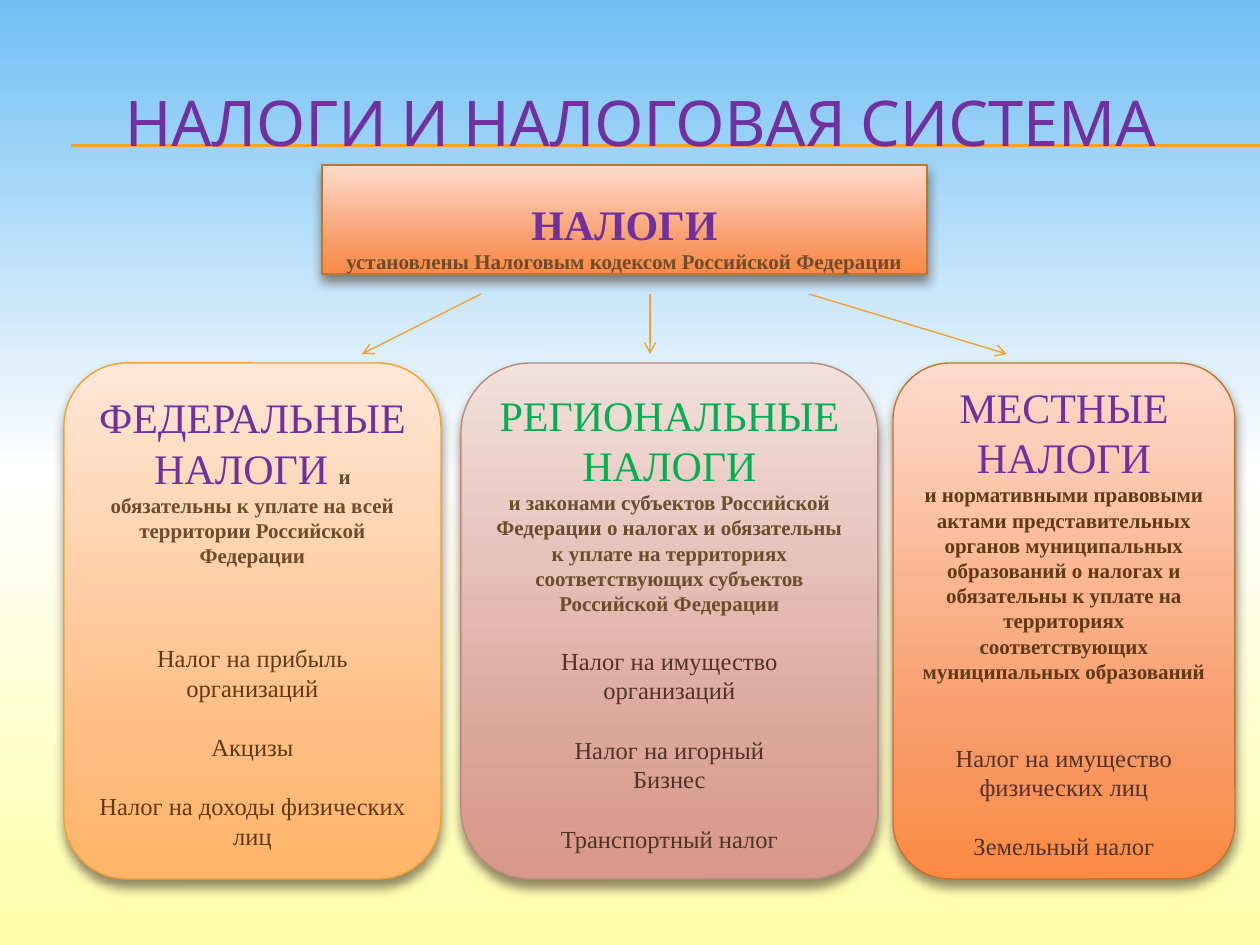
import lxml.etree
import pptx
import pptx.dml.color
import pptx.enum.shapes
import pptx.enum.text
import pptx.oxml.ns
import pptx.util

SCALE = 914400 / 126
SERIF = "Times New Roman"
PURPLE, GREEN, AMBER = "7030A0", "00B050", "F0A22E"
BROWN, DARK, UMBER = "6C4C2C", "603A14", "523227"
SKY = [(0, "70BFF4"), (50, "FFFFFF"), (100, "FFFFA7")]
ORANGE = [(0, "FDDBCC"), (72, "F89B69"), (100, "FC8A43")]
PEACH = [(0, "FFE7D7"), (72, "FFBE84"), (100, "FFB468")]
ROSE = [(0, "F3E0DB"), (72, "DCA79B"), (100, "D89787")]


def px(length):
    """Turn pixels into EMU."""
    return pptx.util.Emu(round(length * SCALE))


def colour(code):
    """Turn a hex string into a colour."""
    return pptx.dml.color.RGBColor.from_string(code)


def add_node(parent, tag, **attributes):
    """Append a drawing element with its attributes."""
    node = lxml.etree.SubElement(parent, pptx.oxml.ns.qn(tag))
    for name, value in attributes.items():
        node.set(name, str(value))
    return node


def paint_gradient(fill, element, stops):
    """Fill from top to bottom through the given stops."""
    fill.gradient()
    fill.gradient_angle = 270
    stop_list = next(element.iter(pptx.oxml.ns.qn("a:gsLst")))
    for old_stop in list(stop_list):
        stop_list.remove(old_stop)
    for percent, code in stops:
        stop = add_node(stop_list, "a:gs", pos=percent * 1000)
        add_node(stop, "a:srgbClr", val=code)


def add_shadow(shape):
    """Give a shape a soft shadow below it."""
    shape.shadow.inherit = False
    effects = next(shape._element.iter(pptx.oxml.ns.qn("a:effectLst")))
    shadow = add_node(effects, "a:outerShdw", blurRad=pptx.util.Pt(6),
                      dist=pptx.util.Pt(4), dir=5400000, rotWithShape=0)
    tone = add_node(shadow, "a:srgbClr", val="4E3B30")
    add_node(tone, "a:alpha", val=60000)


def add_panel(page, kind, box, stops, outline):
    """Draw a shaded panel with an outline and a shadow."""
    panel = page.shapes.add_shape(kind, *map(px, box))
    paint_gradient(panel.fill, panel._element, stops)
    panel.line.color.rgb = colour(outline)
    panel.line.width = pptx.util.Pt(0.79)
    add_shadow(panel)
    panel.text_frame.word_wrap = True
    return panel


def add_line(page, start, end, width, arrow=False):
    """Draw an amber line, with an arrowhead if asked."""
    line = page.shapes.add_connector(
        pptx.enum.shapes.MSO_CONNECTOR.STRAIGHT, *map(px, start + end))
    line.line.color.rgb = colour(AMBER)
    line.line.width = pptx.util.Pt(width)
    if arrow:
        add_node(line.line._get_or_add_ln(), "a:tailEnd", type="arrow")
    add_node(line._element.spPr, "a:effectLst")


def add_span(para, text, size, code, bold=False, font=SERIF):
    """Add one formatted run."""
    span = para.add_run()
    span.text = text
    span.font.name = font
    span.font.size = pptx.util.Pt(size)
    span.font.bold = bold
    span.font.color.rgb = colour(code)


def write_paras(frame, paras):
    """Write centred paragraphs, each a gap above in px and its runs."""
    for index, (gap, spans) in enumerate(paras):
        para = frame.add_paragraph() if index else frame.paragraphs[0]
        para.alignment = pptx.enum.text.PP_ALIGN.CENTER
        if index:
            para.space_before = px(gap)
        for span in spans:
            add_span(para, *span)


def add_title(page, box, text):
    """Place the title over its double rule."""
    left, top, width, height = box
    for offset in (82, 83):
        add_line(page, (left + 29, top + offset), (1260, top + offset), 0.75)
    title = page.shapes.title
    title.left, title.top, title.width, title.height = map(px, box)
    title.text_frame.vertical_anchor = pptx.enum.text.MSO_ANCHOR.MIDDLE
    write_paras(title.text_frame, [(0, [(text, 36, PURPLE, False, "Cabin")])])
    page.shapes.element.append(title._element)


def add_root(page, box):
    """Draw the top box that names the taxes."""
    root = add_panel(page, pptx.enum.shapes.MSO_SHAPE.RECTANGLE, box, ORANGE, "C17529")
    frame = root.text_frame
    frame.margin_bottom = 0
    frame.vertical_anchor = pptx.enum.text.MSO_ANCHOR.BOTTOM
    note = "установлены Налоговым кодексом Российской Федерации"
    write_paras(frame, [(0, [("НАЛОГИ", 24, PURPLE, True)]),
                        (0, [(note, 12, BROWN, True)])])


def add_level(page, box, stops, outline, lead, items, item_colour):
    """Draw one tax level with its heading and its list of taxes."""
    level = add_panel(page, pptx.enum.shapes.MSO_SHAPE.ROUNDED_RECTANGLE,
                      box, stops, outline)
    level.text_frame.vertical_anchor = pptx.enum.text.MSO_ANCHOR.MIDDLE
    taxes = [(gap, [(text, 14, item_colour)]) for gap, text in items]
    write_paras(level.text_frame, lead + taxes)


def main():
    """Build the slide and save it."""
    deck = pptx.Presentation()
    deck.slide_width, deck.slide_height = px(1260), px(945)
    page = deck.slides.add_slide(deck.slide_layouts[5])
    paint_gradient(page.background.fill, page._element, SKY)
    add_title(page, (42, 63, 1197, 116), "НАЛОГИ И НАЛОГОВАЯ СИСТЕМА")
    add_root(page, (322, 165, 605, 109))
    for start, end in ((481, 362), (650, 650), (809, 1007)):
        add_line(page, (start, 294), (end, 354), 0.79, arrow=True)

    federal = [(0, [
        ("ФЕДЕРАЛЬНЫЕ НАЛОГИ ", 24, PURPLE),
        ("и обязательны к уплате на всей территории Российской Федерации",
         12, BROWN, True)])]
    regional = [
        (0, [("РЕГИОНАЛЬНЫЕ НАЛОГИ", 24, GREEN)]),
        (0, [("и законами субъектов Российской Федерации о налогах и "
              "обязательны к уплате на территориях соответствующих "
              "субъектов Российской Федерации", 12, BROWN, True)])]
    local = [
        (0, [("МЕСТНЫЕ НАЛОГИ", 24, PURPLE)]),
        (0, [("и нормативными правовыми актами представительных органов "
              "муниципальных образований о налогах и обязательны к уплате на "
              "территориях соответствующих муниципальных образований",
              12, DARK, True)])]
    top, height = 363, 516
    add_level(page, (64, top, 377, height), PEACH, AMBER, federal, [
        (75, "Налог на прибыль организаций"),
        (30, "Акцизы"),
        (30, "Налог на доходы физических лиц")], DARK)
    add_level(page, (461, top, 417, height), ROSE, "B58B80", regional, [
        (30, "Налог на имущество организаций"),
        (30, "Налог на игорный"),
        (0, "Бизнес"),
        (30, "Транспортный налог")], UMBER)
    add_level(page, (893, top, 342, height), ORANGE, "C17529", local, [
        (59, "Налог на имущество физических лиц"),
        (30, "Земельный налог")], UMBER)
    deck.save("out.pptx")


if __name__ == "__main__":
    main()
